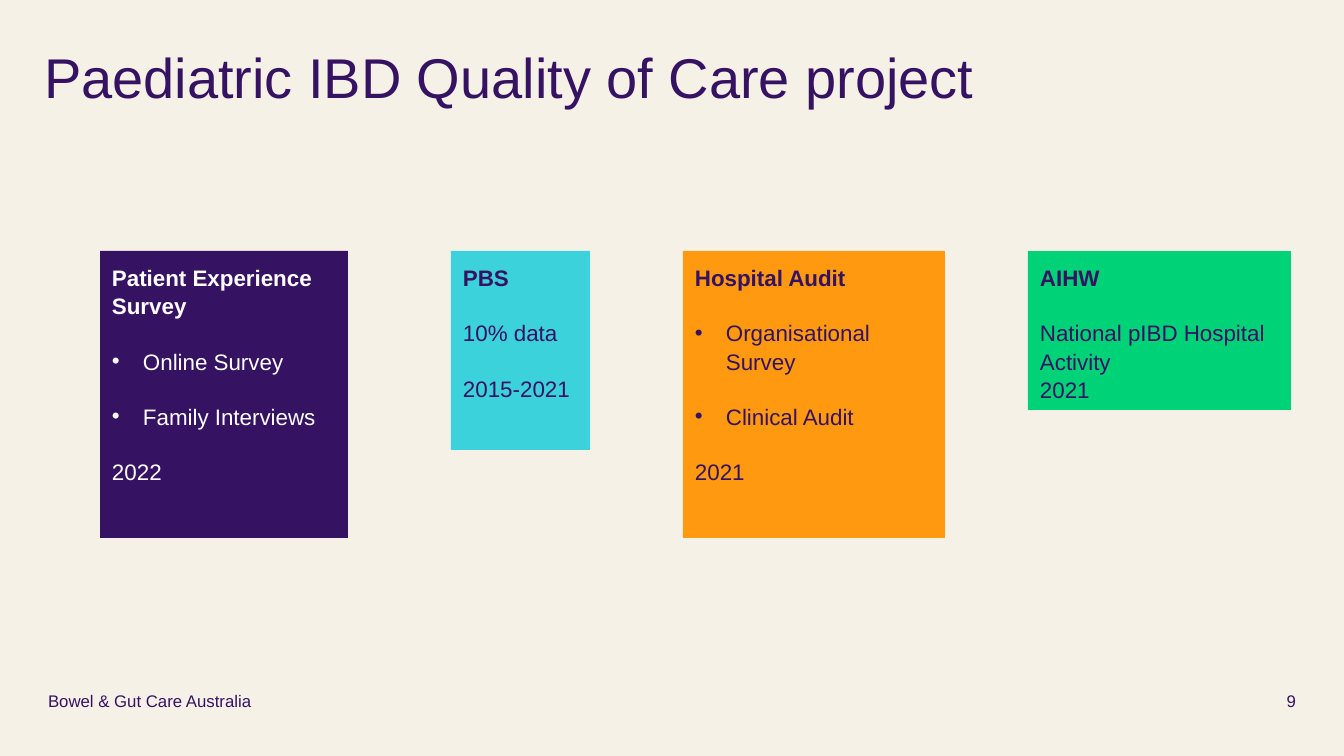
from pptx import Presentation
from pptx.dml.color import RGBColor
from pptx.enum.shapes import MSO_SHAPE
from pptx.enum.text import MSO_ANCHOR, MSO_AUTO_SIZE, PP_ALIGN
from pptx.oxml.ns import qn
from pptx.util import Emu, Pt
from lxml.etree import SubElement

THEME = {
    "font": "Arial",
    "cream": RGBColor.from_string("F5F1E7"),
    "purple": RGBColor.from_string("361263"),
    "white": RGBColor.from_string("FFFFFF"),
    "cyan": RGBColor.from_string("3CD2DB"),
    "orange": RGBColor.from_string("FF990F"),
    "green": RGBColor.from_string("00D278"),
    "title_size": Pt(40),
    "card_size": Pt(16),
    "footer_size": Pt(12),
    "card_gap": Pt(19.3),
}


def px(length):
    return Emu(round(length * 914400 / 100.8))


def set_text(shape, lines, size, color, inset=0, anchor=MSO_ANCHOR.TOP,
             align=PP_ALIGN.LEFT, spacing=1.0):
    frame = shape.text_frame
    frame.text = "\n".join(lines)
    frame.word_wrap = True
    frame.auto_size = MSO_AUTO_SIZE.NONE
    frame.vertical_anchor = anchor
    frame.margin_left = frame.margin_right = px(inset)
    frame.margin_top = frame.margin_bottom = px(inset)
    for para in frame.paragraphs:
        para.alignment = align
        para.line_spacing = spacing
        para.space_before = Pt(0)
        for span in para.runs:
            span.font.name = THEME["font"]
            span.font.size = size
            span.font.color.rgb = color
    return frame.paragraphs


deck = Presentation()
deck.slide_width, deck.slide_height = px(1344), px(756)
page = deck.slides.add_slide(deck.slide_layouts[5])
page.background.fill.solid()
page.background.fill.fore_color.rgb = THEME["cream"]

title = page.shapes.title
title.left, title.top, title.width, title.height = px(44), px(36), px(1196), px(120)
set_text(title, ["Paediatric IBD Quality of Care project"],
         THEME["title_size"], THEME["purple"], spacing=1.1)

footers = [
    (48, 480, "Bowel & Gut Care Australia", PP_ALIGN.LEFT),
    (1251, 45, "9", PP_ALIGN.RIGHT),
]
for left, width, words, align in footers:
    box = page.shapes.add_textbox(px(left), px(675), px(width), px(36))
    set_text(box, [words], THEME["footer_size"], THEME["purple"],
             anchor=MSO_ANCHOR.BOTTOM, align=align)

cards = [
    (100, 248, 287, "purple", "white",
     ["Patient Experience Survey", "Online Survey", "Family Interviews", "2022"],
     {1, 2}, {1, 2, 3}),
    (451, 139, 199, "cyan", "purple",
     ["PBS", "10% data", "2015-2021"], set(), {1, 2}),
    (683, 262, 287, "orange", "purple",
     ["Hospital Audit", "Organisational Survey", "Clinical Audit", "2021"],
     {1, 2}, {1, 2, 3}),
    (1028, 263, 159, "green", "purple",
     ["AIHW", "National pIBD Hospital Activity", "2021"], set(), {1}),
]
for left, width, height, fill, color, lines, bulleted, spaced in cards:
    card = page.shapes.add_shape(MSO_SHAPE.RECTANGLE, px(left), px(251), px(width), px(height))
    card.shadow.inherit = False
    card.fill.solid()
    card.fill.fore_color.rgb = THEME[fill]
    card.line.fill.background()
    paragraphs = set_text(card, lines, THEME["card_size"], THEME[color], inset=12, spacing=1.05)
    for index, para in enumerate(paragraphs):
        para.runs[0].font.bold = index == 0
        if index in spaced:
            para.space_before = THEME["card_gap"]
        if index in bulleted:
            properties = para._p.get_or_add_pPr()
            properties.set("marL", str(px(31)))
            properties.set("indent", str(-px(31)))
            SubElement(properties, qn("a:buFont")).set("typeface", THEME["font"])
            SubElement(properties, qn("a:buChar")).set("char", "•")

deck.save("out.pptx")
